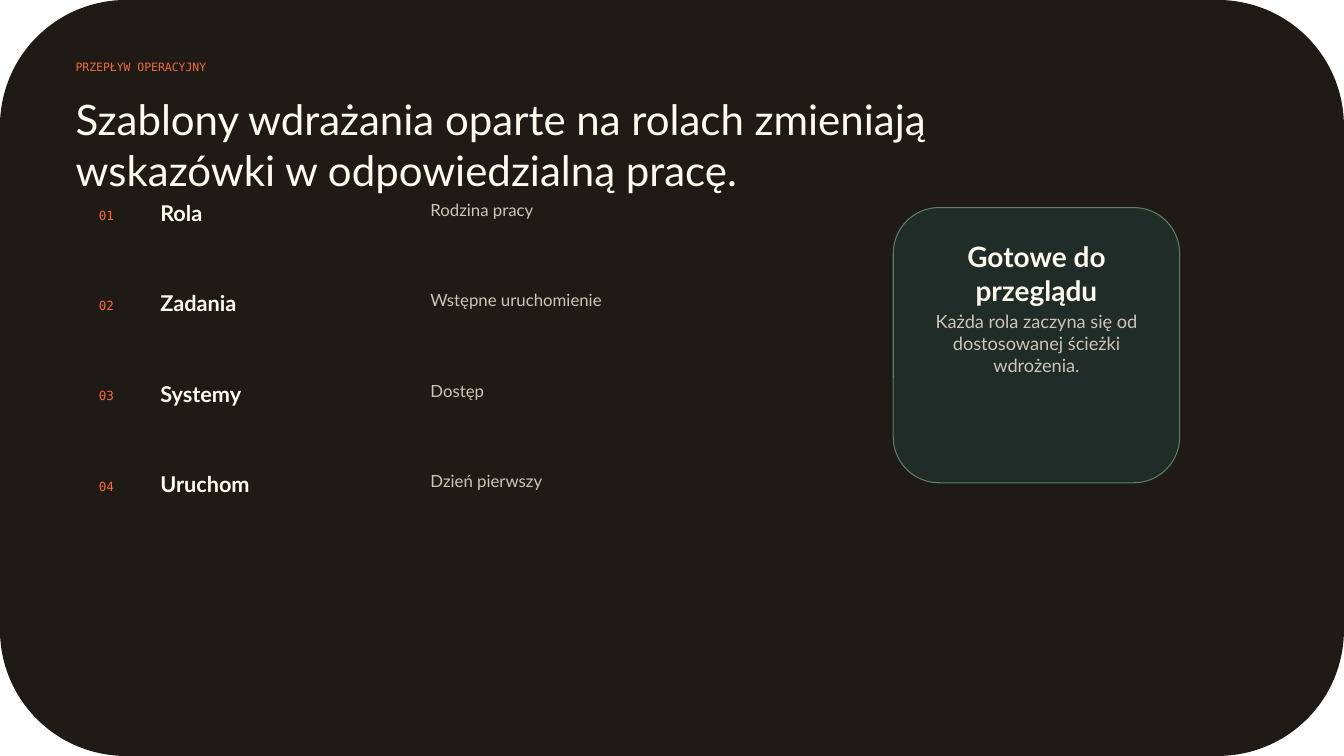
"""Build the slide on role-based onboarding templates."""
import pptx
import pptx.dml.color
import pptx.enum.shapes
import pptx.enum.text
import pptx.util

Inches = pptx.util.Inches
ALIGN = pptx.enum.text.PP_ALIGN

COLORS = {
    "page": "201A16",
    "card": "1F2C27",
    "card_line": "5C7E6B",
    "accent": "F26B3A",
    "light": "FFF9EF",
    "muted": "CFC4B8",
}
MONO, SANS = "DejaVu Sans Mono", "Lato"

EYEBROW = "PRZEPŁYW OPERACYJNY"
TITLE = "Szablony wdrażania oparte na rolach zmieniają wskazówki w odpowiedzialną pracę."
STEPS = [
    ("Rola", "Rodzina pracy"),
    ("Zadania", "Wstępne uruchomienie"),
    ("Systemy", "Dostęp"),
    ("Uruchom", "Dzień pierwszy"),
]
CARD_TITLE = "Gotowe do przeglądu"
CARD_TEXT = "Każda rola zaczyna się od dostosowanej ścieżki wdrożenia."

WIDTH, HEIGHT = 13.33, 7.5
FIRST_ROW, LAST_ROW = 1.98, 4.67
ROW_PITCH = (LAST_ROW - FIRST_ROW) / (len(STEPS) - 1)


def rgb(name):
    return pptx.dml.color.RGBColor.from_string(COLORS[name])


def write(box, text, size, color, font=SANS, bold=False, align=ALIGN.LEFT):
    frame = box.text_frame
    frame.word_wrap = True
    frame.auto_size = pptx.enum.text.MSO_AUTO_SIZE.NONE
    frame.vertical_anchor = pptx.enum.text.MSO_ANCHOR.TOP
    frame.margin_left = frame.margin_top = frame.margin_right = frame.margin_bottom = 0
    para = frame.paragraphs[0]
    para.text = text
    para.alignment = align
    para.font.name = font
    para.font.size = pptx.util.Pt(size)
    para.font.bold = bold
    para.font.color.rgb = rgb(color)


def add_text(page, place, *content, **style):
    box = page.shapes.add_textbox(*map(Inches, place))
    write(box, *content, **style)


def add_rounded(page, place, fill):
    kind = pptx.enum.shapes.MSO_SHAPE.ROUNDED_RECTANGLE
    shape = page.shapes.add_shape(kind, *map(Inches, place))
    shape.shadow.inherit = False
    shape.fill.solid()
    shape.fill.fore_color.rgb = rgb(fill)
    return shape


def main():
    deck = pptx.Presentation()
    deck.slide_width, deck.slide_height = Inches(WIDTH), Inches(HEIGHT)
    page = deck.slides.add_slide(deck.slide_layouts.get_by_name("Title Only"))

    title = page.shapes.title
    title.left, title.top = Inches(0.75), Inches(0.93)
    title.width, title.height = Inches(9.41), Inches(0.71)
    write(title, TITLE, 30, "light")

    backdrop = add_rounded(page, (0, 0, WIDTH, HEIGHT), "page")
    backdrop.line.fill.background()
    title.element.addprevious(backdrop.element)

    add_text(page, (0.75, 0.6, 4.59, 0.28), EYEBROW, 8.2, "accent", font=MONO)

    for index, (name, detail) in enumerate(STEPS):
        top = FIRST_ROW + index * ROW_PITCH
        add_text(page, (0.98, top + 0.08, 0.55, 0.24), f"{index + 1:02}", 9, "accent", font=MONO)
        add_text(page, (1.59, top, 2.84, 0.28), name, 15.5, "light", bold=True)
        add_text(page, (4.27, top, 3.94, 0.31), detail, 12, "muted")

    card = add_rounded(page, (8.86, 2.06, 2.84, 2.73), "card")
    card.line.color.rgb = rgb("card_line")
    card.line.width = pptx.util.Pt(0.75)
    add_text(page, (9.13, 2.38, 2.3, 0.46), CARD_TITLE, 20, "light", bold=True, align=ALIGN.CENTER)
    add_text(page, (9.13, 3.08, 2.3, 0.98), CARD_TEXT, 13, "muted", align=ALIGN.CENTER)

    deck.save("out.pptx")


if __name__ == "__main__":
    main()
